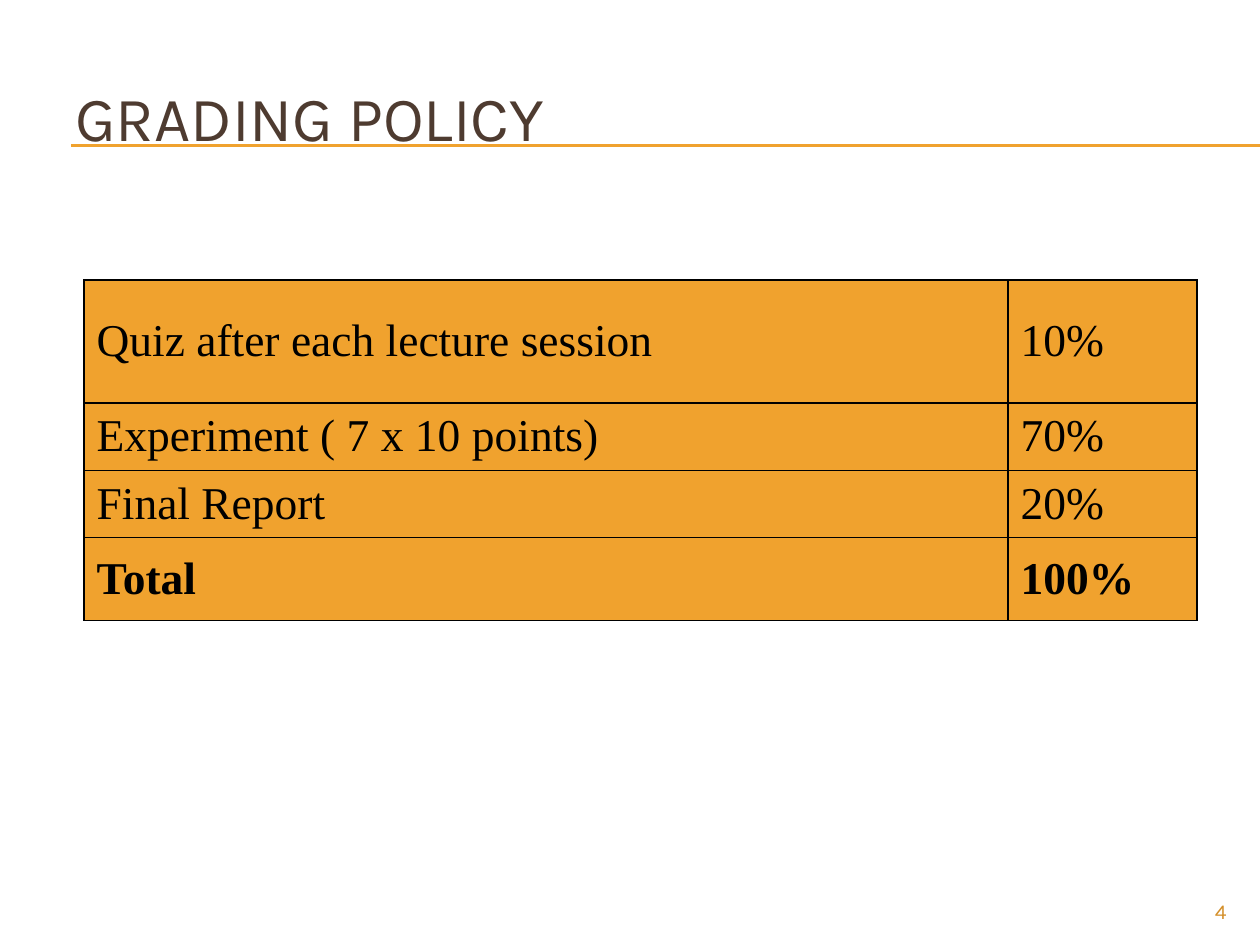
from dataclasses import dataclass

from lxml import etree
from pptx import Presentation
from pptx.dml.color import RGBColor
from pptx.enum.shapes import MSO_CONNECTOR
from pptx.enum.text import MSO_ANCHOR, PP_ALIGN
from pptx.oxml.ns import qn
from pptx.util import Emu, Pt

STRAIGHT = MSO_CONNECTOR.STRAIGHT
TOP, MIDDLE = MSO_ANCHOR.TOP, MSO_ANCHOR.MIDDLE
LEFT, RIGHT = PP_ALIGN.LEFT, PP_ALIGN.RIGHT

PX_PER_INCH = 126
SLIDE_WIDTH, SLIDE_HEIGHT = 1260, 945
ORANGE, BROWN, BLACK, DARK_ORANGE = "F0A22E", "4E3B30", "000000", "D48F29"
HEADING_FONT, TABLE_FONT = "Karla", "Times New Roman"
HANGING_INDENT = 48
LINE_WIDTH = Pt(0.75)


@dataclass
class Label:
    text: str
    left: int
    top: int
    width: int
    height: int
    size: int
    color: str
    anchor: MSO_ANCHOR
    align: PP_ALIGN


@dataclass
class Grade:
    item: str
    share: str
    height: int
    bold: bool = False


LABELS = [
    Label("GRADING POLICY", 63, 38, 1134, 157, 36, BROWN, MIDDLE, LEFT),
    Label("4", 1134, 892, 105, 34, 12, DARK_ORANGE, TOP, RIGHT),
]
RULE_LEFT, RULE_HEIGHTS = 71, (145, 146)
GRADES = [
    Grade("Quiz after each lecture session", "10%", 123),
    Grade("Experiment ( 7 x 10 points)", "70%", 60),
    Grade("Final Report", "20%", 60),
    Grade("Total", "100%", 83, bold=True),
]
TABLE_LEFT, TABLE_TOP = 84, 280
COLUMN_WIDTHS = (924, 189)


def px(length: int) -> Emu:
    return Emu(round(length * 914400 / PX_PER_INCH))


def rgb(color: str) -> RGBColor:
    return RGBColor.from_string(color)


def style(paragraph, font_name: str, size: int, color: str, bold: bool = False) -> None:
    font = paragraph.font
    font.name, font.size, font.bold = font_name, Pt(size), bold
    font.color.rgb = rgb(color)


def draw_rule(slide, y: int) -> None:
    rule = slide.shapes.add_connector(
        STRAIGHT, px(RULE_LEFT), px(y), px(SLIDE_WIDTH), px(y))
    rule.line.color.rgb = rgb(ORANGE)
    rule.line.width = LINE_WIDTH
    etree.SubElement(rule._element.spPr, qn("a:effectLst"))


def draw_label(slide, label: Label) -> None:
    box = slide.shapes.add_textbox(
        px(label.left), px(label.top), px(label.width), px(label.height))
    frame = box.text_frame
    frame.word_wrap = True
    frame.vertical_anchor = label.anchor
    paragraph = frame.paragraphs[0]
    paragraph.text = label.text
    paragraph.alignment = label.align
    style(paragraph, HEADING_FONT, label.size, label.color)


def add_borders(cell) -> None:
    properties = cell._tc.get_or_add_tcPr()
    for side in ("a:lnL", "a:lnR", "a:lnT", "a:lnB"):
        border = etree.SubElement(properties, qn(side), w=str(LINE_WIDTH))
        fill = etree.SubElement(border, qn("a:solidFill"))
        etree.SubElement(fill, qn("a:srgbClr"), val=BLACK)


def fill_cell(cell, text: str, bold: bool) -> None:
    add_borders(cell)
    cell.fill.solid()
    cell.fill.fore_color.rgb = rgb(ORANGE)
    cell.vertical_anchor = MIDDLE
    paragraph = cell.text_frame.paragraphs[0]
    paragraph.text = text
    style(paragraph, TABLE_FONT, 26, BLACK, bold)
    indents = paragraph._p.get_or_add_pPr()
    indents.set("marL", str(px(HANGING_INDENT)))
    indents.set("indent", str(px(-HANGING_INDENT)))


def draw_grades(slide, grades: list[Grade]) -> None:
    table = slide.shapes.add_table(
        len(grades), len(COLUMN_WIDTHS), px(TABLE_LEFT), px(TABLE_TOP),
        px(sum(COLUMN_WIDTHS)), px(sum(grade.height for grade in grades))).table
    table.first_row = table.horz_banding = False
    for column, width in zip(table.columns, COLUMN_WIDTHS):
        column.width = px(width)
    for row, grade in zip(table.rows, grades):
        row.height = px(grade.height)
        for cell, text in zip(row.cells, (grade.item, grade.share)):
            fill_cell(cell, text, grade.bold)


def main() -> None:
    presentation = Presentation()
    presentation.slide_width = px(SLIDE_WIDTH)
    presentation.slide_height = px(SLIDE_HEIGHT)
    slide = presentation.slides.add_slide(presentation.slide_layouts[6])
    for y in RULE_HEIGHTS:
        draw_rule(slide, y)
    for label in LABELS:
        draw_label(slide, label)
    draw_grades(slide, GRADES)
    presentation.save("out.pptx")


if __name__ == "__main__":
    main()
